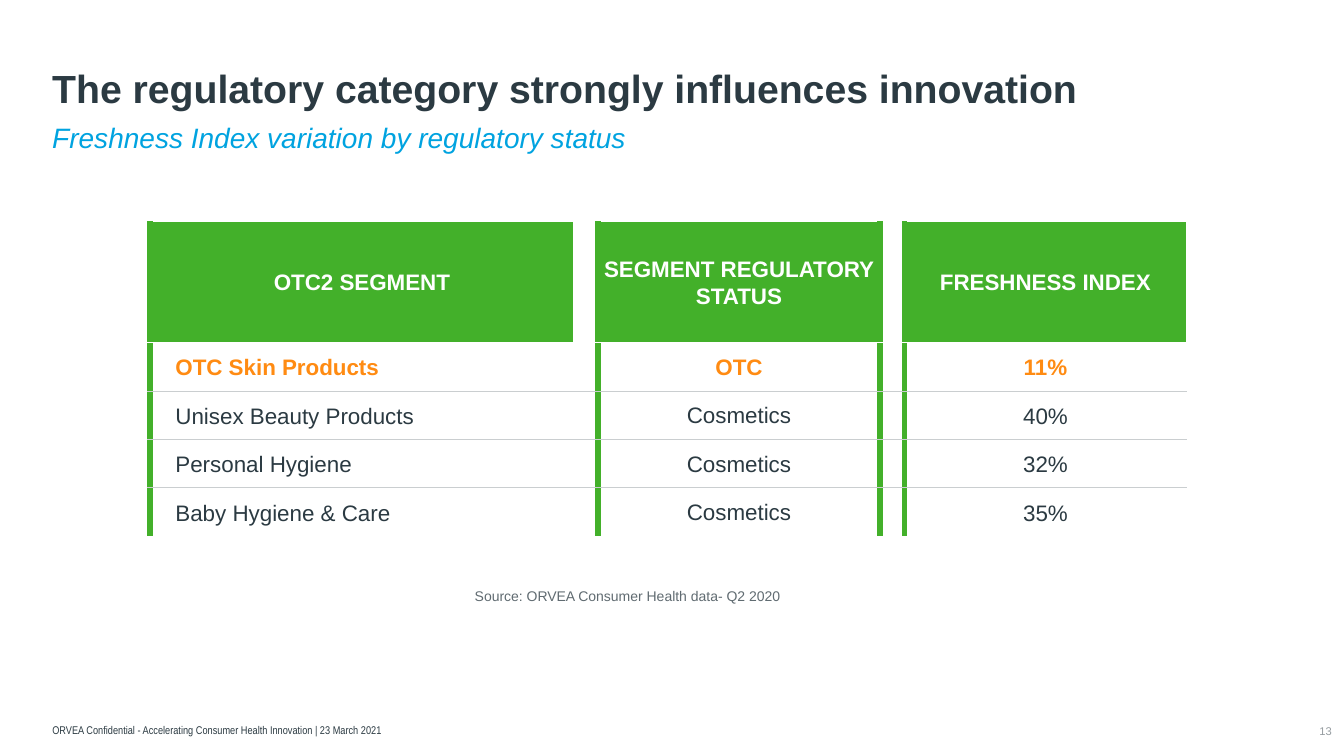
from dataclasses import dataclass

from lxml import etree
from pptx import Presentation
from pptx import util as u
from pptx.dml.color import RGBColor
from pptx.enum import text
from pptx.oxml.ns import qn

ALIGN, ANCHOR = text.PP_ALIGN, text.MSO_ANCHOR


@dataclass(frozen=True)
class Theme:
    ink: str = "2B3A42"
    blue: str = "00A3E0"
    green: str = "43B02A"
    orange: str = "FF8B12"
    rule: str = "CACED0"
    grey: str = "606B71"
    pale: str = "959CA0"
    white: str = "FFFFFF"
    font: str = "Arial"
    narrow: str = "Arial Narrow"
    title: int = 28
    subtitle: int = 20
    body: int = 16
    source: int = 10
    footer: int = 8
    bar_width: float = 4.5
    rule_width: float = 0.75


class SlideBuilder:
    def __init__(self, s, theme):
        self.s, self.theme = s, theme

    def style(self, p, size, color, bold=False, italic=False, font=None,
              align=ALIGN.LEFT):
        p.alignment = align
        for r in p.runs:
            f = r.font
            f.name, f.size = font or self.theme.font, u.Pt(size)
            f.bold, f.italic = bold, italic
            f.color.rgb = RGBColor.from_string(color)

    def text(self, words, box, size, color, anchor=ANCHOR.TOP, inset=None,
             spacing=None, **style):
        tf = self.s.shapes.add_textbox(*map(u.Inches, box)).text_frame
        tf.word_wrap = True
        tf.vertical_anchor = anchor
        if inset is not None:
            tf.margin_left = tf.margin_right = u.Inches(inset)
            tf.margin_top = tf.margin_bottom = u.Inches(inset)
        tf.text = words
        p = tf.paragraphs[0]
        if spacing:
            p.line_spacing = spacing
        self.style(p, size, color, **style)

    def borders(self, cell, **edges):
        """Edges L, R, T, B are (colour, width) pairs."""
        tc_pr = cell._tc.get_or_add_tcPr()
        used = [edge for edge in "LRTB" if edge in edges]
        for i, edge in enumerate(used):
            color, width = edges[edge]
            ln = etree.Element(qn("a:ln" + edge), w=str(u.Pt(width)))
            fill = etree.SubElement(ln, qn("a:solidFill"))
            etree.SubElement(fill, qn("a:srgbClr"), val=color)
            tc_pr.insert(i, ln)

    def cell(self, cell, words, color, bold, align, insets):
        cell.vertical_anchor = ANCHOR.MIDDLE
        (cell.margin_left, cell.margin_top,
         cell.margin_right, cell.margin_bottom) = map(u.Inches, insets)
        cell.text_frame.text = words
        p = cell.text_frame.paragraphs[0]
        p.line_spacing, p.space_after = 1.07, u.Pt(8)
        self.style(p, self.theme.body, color, bold=bold, align=align)

    def table(self, rows, left, top, widths, heights):
        """Data columns alternate with narrow gap columns."""
        t = self.theme
        bar, rule = (t.green, t.bar_width), (t.rule, t.rule_width)
        box = (left, top, sum(widths), sum(heights))
        tbl = self.s.shapes.add_table(len(heights), len(widths),
                                      *map(u.Inches, box)).table
        tbl.first_row = tbl.horz_banding = False
        for col, width in zip(tbl.columns, widths):
            col.width = u.Inches(width)
        for row, height in zip(tbl.rows, heights):
            row.height = u.Inches(height)

        header_insets = [(0.1, 0.05, 0.1, 0.05), (0, 0, 0, 0),
                         (0.1, 0.05, 0.1, 0.05)]
        body_insets = [(0.25, 0.01, 0.01, 0), (0, 0, 0, 0),
                       (0.01, 0.01, 0.01, 0)]
        for i in range(len(heights)):
            for j in range(len(widths)):
                cell, gap = tbl.cell(i, j), j % 2 == 1
                # Fill
                if i == 0:
                    cell.fill.solid()
                    cell.fill.fore_color.rgb = RGBColor.from_string(
                        t.white if gap else t.green)
                else:
                    cell.fill.background()
                # Green bars and thin row rules
                edges = {"R" if gap else "L": bar}
                if i > 1:
                    edges["T"] = rule
                if 0 < i < len(heights) - 1:
                    edges["B"] = rule
                self.borders(cell, **edges)
                # Words
                if gap:
                    continue
                k = j // 2
                color = (t.white, t.orange)[i] if i < 2 else t.ink
                align = ALIGN.JUSTIFY if i and k == 0 else ALIGN.CENTER
                insets = body_insets[k] if i else header_insets[k]
                self.cell(cell, rows[i][k], color, i < 2, align, insets)


def main():
    prs = Presentation()
    prs.slide_width, prs.slide_height = u.Inches(13.33), u.Inches(7.5)
    t = Theme()
    b = SlideBuilder(prs.slides.add_slide(prs.slide_layouts[6]), t)

    # Heading
    b.text("The regulatory category strongly influences innovation",
           (0.42, 0.32, 12.4, 0.84), t.title, t.ink, ANCHOR.BOTTOM,
           spacing=0.9, bold=True)
    b.text("Freshness Index variation by regulatory status",
           (0.42, 1.18, 12.4, 0.44), t.subtitle, t.blue,
           spacing=0.9, italic=True)

    # Freshness table
    rows = [
        ("OTC2 SEGMENT", "SEGMENT REGULATORY STATUS", "FRESHNESS INDEX"),
        ("OTC Skin Products", "OTC", "11%"),
        ("Unisex Beauty Products", "Cosmetics", "40%"),
        ("Personal Hygiene", "Cosmetics", "32%"),
        ("Baby Hygiene & Care", "Cosmetics", "35%"),
    ]
    b.table(rows, 1.49, 2.2, [4.2, 0.09, 2.8, 0.09, 2.8], [1.2] + [0.48] * 4)

    # Source and footer
    b.text("Source: ORVEA Consumer Health data- Q2 2020",
           (4.61, 5.78, 3.38, 0.27), t.source, t.grey)
    b.text("ORVEA Confidential - Accelerating Consumer Health Innovation | "
           "23 March 2021", (0.42, 6.99, 10.15, 0.37), t.footer, t.ink,
           ANCHOR.BOTTOM, font=t.narrow)
    b.text("13", (12.82, 7.16, 0.39, 0.19), t.footer, t.pale, ANCHOR.MIDDLE,
           inset=0, align=ALIGN.RIGHT)

    prs.save("out.pptx")


if __name__ == "__main__":
    main()
